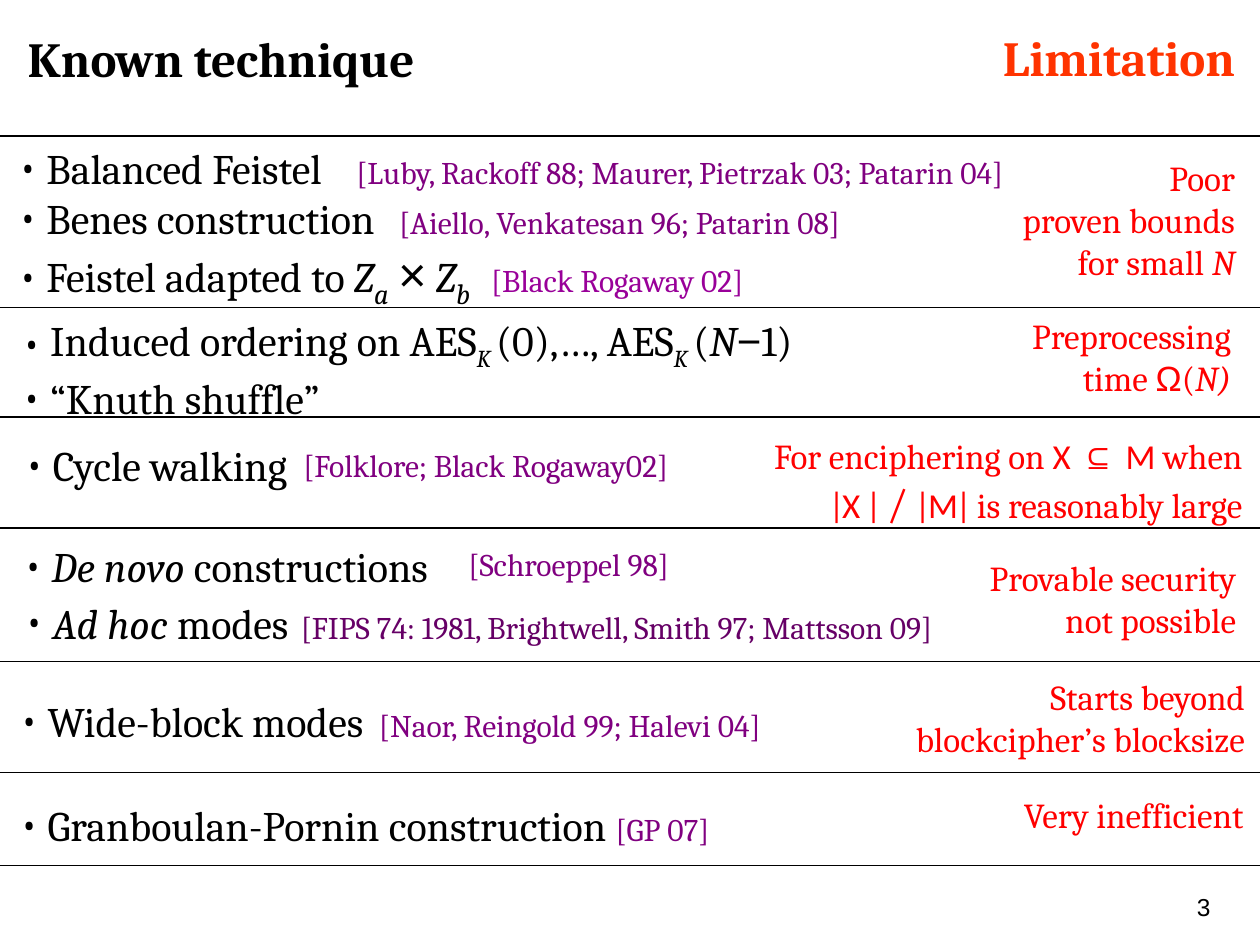
from lxml.etree import SubElement
from pptx import Presentation
from pptx.dml.color import RGBColor
from pptx.enum.shapes import MSO_CONNECTOR
from pptx.enum.text import MSO_ANCHOR, MSO_AUTO_SIZE, PP_ALIGN
from pptx.oxml.ns import qn
from pptx.util import Inches, Pt

BLACK = RGBColor(0, 0, 0)
RED = RGBColor(255, 0, 0)
ORANGE = RGBColor(255, 51, 0)
PURPLE = RGBColor(128, 0, 128)
MAGENTA = RGBColor(153, 0, 153)
PLUM = RGBColor(102, 0, 102)

COLUMNS, ROWS = 100, 75  # grid over the whole slide

ITALIC = {"italic": True}
SUBSCRIPT = {"italic": True, "baseline": -25}
ARIAL = {"font": "Arial"}
CALIBRI = {"font": "Calibri"}


def add_text(paragraph, text, font="Cambria", size=24, color=BLACK,
             bold=False, italic=False, baseline=0):
    run = paragraph.add_run()
    run.text = text
    run.font.name, run.font.size = font, Pt(size)
    run.font.bold, run.font.italic = bold, italic
    run.font.color.rgb = color
    if baseline:
        run._r.get_or_add_rPr().set("baseline", str(baseline * 1000))


def cite(text, color=PURPLE):
    return text, {"size": 18, "color": color}


class Deck:
    def __init__(self):
        self.presentation = Presentation()
        self.presentation.slide_width = Inches(10)
        self.presentation.slide_height = Inches(7.5)
        self.slide = self.presentation.slides.add_slide(
            self.presentation.slide_layouts[5])

    def across(self, columns):
        return round(self.presentation.slide_width * columns / COLUMNS)

    def down(self, rows):
        return round(self.presentation.slide_height * rows / ROWS)

    def fill(self, shape, lines, align, **style):
        """Write lines, each a list of plain strings or (string, format) pairs."""
        frame = shape.text_frame
        frame.word_wrap = True
        frame.auto_size = MSO_AUTO_SIZE.NONE
        frame.vertical_anchor = MSO_ANCHOR.TOP
        for index, line in enumerate(lines):
            paragraph = frame.add_paragraph() if index else frame.paragraphs[0]
            paragraph.alignment = align
            for piece in line:
                text, extra = (piece, {}) if isinstance(piece, str) else piece
                add_text(paragraph, text, **{**style, **extra})

    def title(self, left, top, width, height, text, **style):
        title = self.slide.shapes.title
        title.left, title.top = self.across(left), self.down(top)
        title.width, title.height = self.across(width), self.down(height)
        self.fill(title, [[text]], PP_ALIGN.LEFT, **style)

    def text(self, left, top, width, height, lines, align=PP_ALIGN.LEFT, **style):
        box = self.slide.shapes.add_textbox(
            self.across(left), self.down(top), self.across(width), self.down(height))
        self.fill(box, lines, align, **style)
        return box

    def techniques(self, left, top, width, height, lines, tabs=()):
        """Bulleted lines; tabs gives each line's citation column, or None."""
        box = self.text(left, top, width, height, lines)
        for index, paragraph in enumerate(box.text_frame.paragraphs):
            properties = paragraph._p.get_or_add_pPr()
            SubElement(properties, qn("a:buFont")).set("typeface", "Cambria")
            SubElement(properties, qn("a:buChar")).set("char", "•")
            if index < len(tabs) and tabs[index]:
                stops = SubElement(properties, qn("a:tabLst"))
                stop = SubElement(stops, qn("a:tab"))
                stop.set("pos", str(self.across(tabs[index])))
                stop.set("algn", "l")

    def limitation(self, right, top, width, height, lines):
        self.text(right - width, top, width, height, lines, PP_ALIGN.RIGHT,
                  size=20, color=RED)

    def rule(self, row):
        y = self.down(row)
        line = self.slide.shapes.add_connector(
            MSO_CONNECTOR.STRAIGHT, 0, y, self.across(COLUMNS), y)
        line.line.color.rgb = BLACK
        line.line.width = Pt(0.75)
        SubElement(line._element.spPr, qn("a:effectLst"))


def main():
    deck = Deck()
    deck.title(1.2, 1.8, 34.6, 5.7, "Known technique", size=28, bold=True)
    deck.text(77, 1.7, 22, 5.7, [["Limitation"]], PP_ALIGN.RIGHT,
              size=28, color=ORANGE, bold=True)
    for row in (10.8, 24.4, 33.1, 41.9, 52.5, 61.3, 68.7):
        deck.rule(row)

    deck.techniques(0.5, 10.8, 85, 15.8, [
        [" Balanced Feistel",
         cite("\t[Luby, Rackoff 88; Maurer, Pietrzak 03; Patarin 04]")],
        [" Benes construction", cite("\t[Aiello, Venkatesan 96; Patarin 08]")],
        [" Feistel adapted to ", ("Z", ITALIC), ("a", {**SUBSCRIPT, "size": 28}),
         " ", ("×", {**ARIAL, "size": 28}), (" Z", ITALIC),
         ("b", {**SUBSCRIPT, "size": 28}), cite("\t[Black Rogaway 02]", MAGENTA)],
    ], tabs=(26.8, 30.2, 37.5))
    deck.limitation(99, 11.9, 20, 11.1, [
        ["Poor"], ["proven bounds"], ["for small ", ("N", ITALIC)]])

    deck.techniques(0.8, 24.5, 67.7, 9.1, [
        [" Induced ordering on AES", ("K ", SUBSCRIPT), "(0),…, AES",
         ("K ", SUBSCRIPT), "(", ("N", ITALIC), ("−", ARIAL), "1)"],
        [" “Knuth shuffle”"]])
    deck.limitation(98.7, 24.5, 20, 7.7, [
        ["Preprocessing"], ["time ", ("Ω", ARIAL), "(", ("N)", ITALIC)]])

    deck.techniques(1, 34.4, 24.5, 5, [[" Cycle walking"]])
    deck.text(23.1, 34.9, 33.5, 4, [[cite("[Folklore; Black Rogaway02]")]])
    deck.limitation(99.6, 34, 42.5, 8.4, [
        ["For enciphering on ", ("X", CALIBRI), (" ⊆ ", ARIAL), ("M", CALIBRI),
         " when"],
        ["|", ("X", CALIBRI), " | ", ("/", {"size": 24}), (" ", ARIAL), "|",
         ("M", CALIBRI), "| is reasonably large"]])

    deck.techniques(0.9, 42.4, 36.5, 5, [[(" De novo ", ITALIC), "constructions"]])
    deck.text(36.2, 42.8, 20, 4, [[cite("[Schroeppel 98]")]])
    deck.techniques(1, 46.9, 80, 5, [
        [" ", ("Ad hoc ", ITALIC), "modes",
         cite("\t[FIPS 74: 1981, Brightwell, Smith 97; Mattsson 09]", PLUM)],
    ], tabs=(21.9,))
    deck.limitation(99.1, 43.7, 23.5, 7.7, [["Provable security"], ["not possible"]])

    deck.techniques(0.6, 54.7, 65, 5, [
        [" Wide-block modes", cite("\t[Naor, Reingold 99; Halevi 04]")]],
        tabs=(28.5,))
    deck.limitation(99.8, 53.1, 30.5, 7.7, [
        ["Starts beyond"], ["blockcipher’s blocksize"]])

    deck.techniques(0.6, 63, 60, 5, [
        [" Granboulan-Pornin construction ", cite("[GP 07]")]])
    deck.limitation(99.7, 62.5, 21, 4.4, [["Very inefficient"]])

    deck.text(94, 70.3, 4.4, 3.4, [["3"]], size=14, font="Arial")
    deck.presentation.save("out.pptx")


if __name__ == "__main__":
    main()
